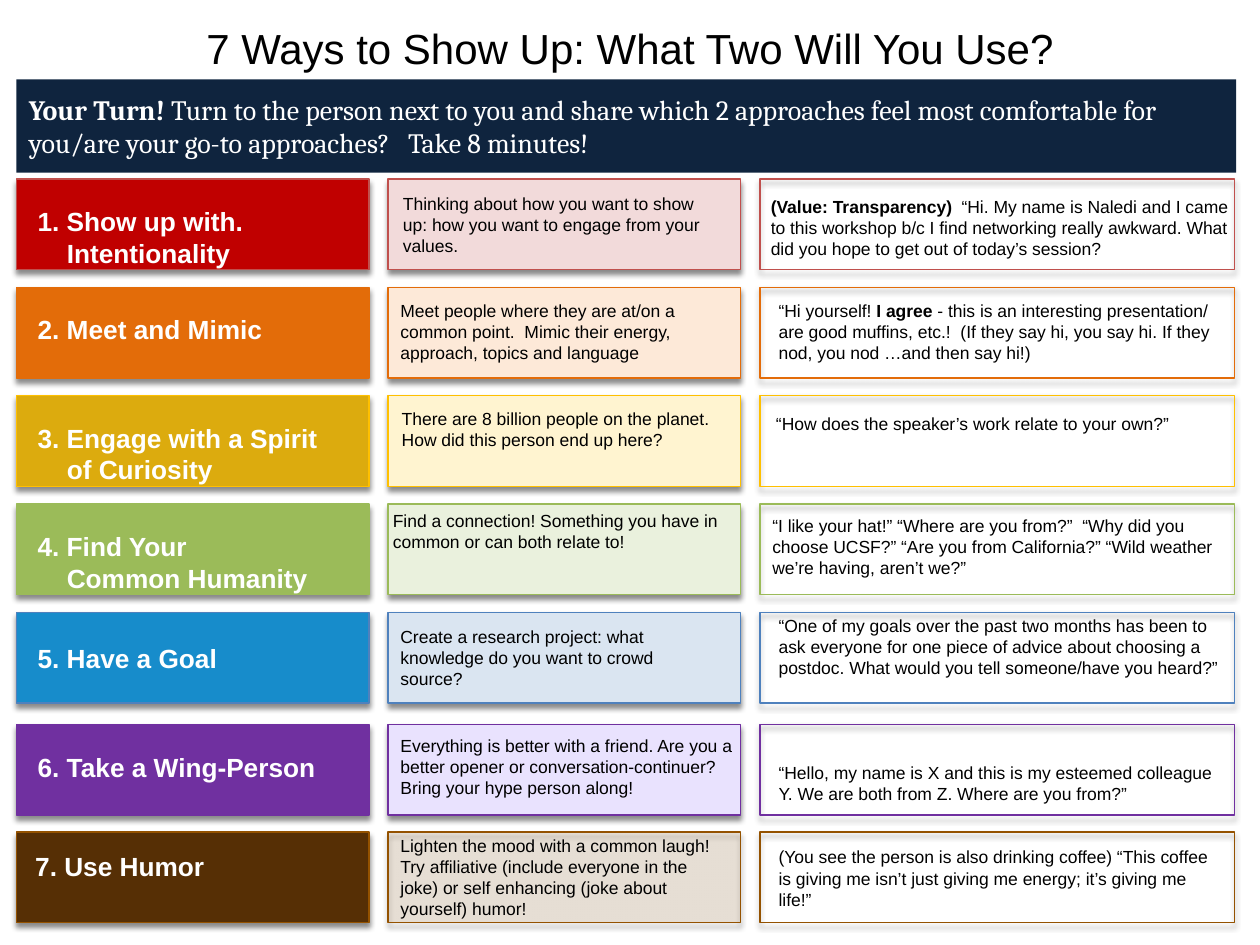
from pptx import Presentation
from pptx.dml.color import RGBColor
from pptx.enum.shapes import MSO_SHAPE
from pptx.enum.text import MSO_ANCHOR, PP_ALIGN
from pptx.oxml.ns import qn
from pptx.util import Pt
from lxml import etree

RECTANGLE = MSO_SHAPE.RECTANGLE
TOP, MIDDLE = MSO_ANCHOR.TOP, MSO_ANCHOR.MIDDLE
LEFT, CENTER = PP_ALIGN.LEFT, PP_ALIGN.CENTER

COLORS = {
    "black": "000000", "white": "FFFFFF", "navy": "0F243E",
    "red": "C00000", "rose": "F2DADA", "brick": "C0504D",
    "orange": "E36C09", "peach": "FDE9D8",
    "mustard": "DCAB0E", "cream": "FFF4D0", "gold": "FFC000",
    "green": "9BBB59", "mint": "EAF1DD",
    "blue": "178CCB", "ice": "DAE5F1", "steel": "4F81BD",
    "purple": "7030A0", "lilac": "E9E2FE",
    "umber": "562F05", "brown": "945200",
}

# Left edge and width of the label, advice and example columns
COLUMNS = [(9.36, 201.6), (221.76, 201.6), (434.2, 271.4)]
ROW_HEIGHT = 51.84
LABEL_INDENT = 16.68

# Row top, label fill, advice fill, advice opacity, outline, then for each
# column its text and the text's left, top, width and height.
# ** switches bold on and off.
WAYS = [
    (102.24, "red", "rose", 100, "brick",
     ("1. Show up with.\nIntentionality", 14.4, 113.8, 186.5, 43.9),
     ("Thinking about how you want to show up: how you want to engage from "
      "your values.", 223.2, 106.6, 191.5, 43.9),
     ("**(Value: Transparency) ** “Hi. My name is Naledi and I came to this "
      "workshop b/c I find networking really awkward. What did you hope to "
      "get out of today’s session?", 433.4, 108.7, 280.8, 55.4)),
    (164.16, "orange", "peach", 100, "orange",
     ("2. Meet and Mimic", 14.4, 175.7, 186.5, 37.4),
     ("Meet people where they are at/on a common point.  Mimic their energy, "
      "approach, topics and language", 221.76, 167.8, 191.5, 43.9),
     ("“Hi yourself! **I agree **- this is an interesting presentation/ are "
      "good muffins, etc.!  (If they say hi, you say hi. If they nod, you "
      "nod …and then say hi!)", 437.8, 167.8, 265.7, 67.7)),
    (226.08, "mustard", "cream", 100, "gold",
     ("3. Engage with a Spirit\nof Curiosity", 14.4, 237.6, 186.5, 55.4),
     ("There are 8 billion people on the planet. How did this person end up "
      "here?", 222.5, 229.7, 191.5, 31.7),
     ("“How does the speaker’s work relate to your own?”",
      436.3, 232.6, 265.7, 43.9)),
    (288, "green", "mint", 100, "green",
     ("4. Find Your\nCommon Humanity", 14.4, 299.5, 186.5, 43.9),
     ("Find a connection! Something you have in common or can both relate "
      "to!", 217.4, 288, 210.2, 31.7),
     ("“I like your hat!” “Where are you from?”  “Why did you choose UCSF?” "
      "“Are you from California?” “Wild weather we’re having, aren’t we?”",
      434.2, 290.9, 265.7, 67.7)),
    (349.92, "blue", "ice", 100, "steel",
     ("5. Have a Goal", 14.4, 363.6, 186.5, 25.2),
     ("Create a research project: what knowledge do you want to crowd "
      "source?", 221.76, 354.2, 191.5, 43.9),
     ("“One of my goals over the past two months has been to ask everyone "
      "for one piece of advice about choosing a postdoc. What would you tell "
      "someone/have you heard?”", 437.8, 347.8, 265.7, 79.9)),
    (414, "purple", "lilac", 100, "purple",
     ("6. Take a Wing-Person", 14.4, 425.5, 186.5, 25.2),
     ("Everything is better with a friend. Are you a better opener or "
      "conversation-continuer?  Bring your hype person along!",
      221.76, 416.2, 212.4, 43.9),
     ("“Hello, my name is X and this is my esteemed colleague Y. We are both "
      "from Z. Where are you from?”", 437.8, 432, 265.7, 55.4)),
    (475.4, "umber", "brown", 12, "brown",
     ("7. Use Humor", 13, 482.4, 186.5, 25.2),
     ("Lighten the mood with a common laugh! Try affiliative (include "
      "everyone in the joke) or self enhancing (joke about yourself) humor!",
      221.76, 473.8, 191.5, 55.4),
     ("(You see the person is also drinking coffee) “This coffee is giving "
      "me isn’t just giving me energy; it’s giving me life!”",
      437.8, 480.2, 265.7, 67.7)),
]


class SlideBuilder:
    font = "Arial"
    line_width = 0.79

    def __init__(self, slide):
        self.slide = slide

    def color(self, name):
        return RGBColor.from_string(COLORS[name])

    def box(self, left, top, width, height, fill=None, line=None, opacity=100):
        """A rectangle; an outlined one also casts a soft shadow."""
        box = self.slide.shapes.add_shape(
            RECTANGLE, Pt(left), Pt(top), Pt(width), Pt(height))
        box.shadow.inherit = False
        if fill:
            box.fill.solid()
            box.fill.fore_color.rgb = self.color(fill)
        else:
            box.fill.background()
        if opacity < 100:
            tint = box._element.spPr.find(qn("a:solidFill"))[0]
            etree.SubElement(tint, qn("a:alpha"), val=str(opacity * 1000))
        if line:
            box.line.color.rgb = self.color(line)
            box.line.width = Pt(self.line_width)
            self.cast_shadow(box)
        else:
            box.line.fill.background()
        return box

    def cast_shadow(self, box):
        effects = box._element.spPr.find(qn("a:effectLst"))
        shadow = etree.SubElement(
            effects, qn("a:outerShdw"), blurRad=str(int(Pt(3))),
            dist=str(int(Pt(2.4))), dir="5400000", rotWithShape="0")
        shade = etree.SubElement(shadow, qn("a:srgbClr"), val=COLORS["black"])
        etree.SubElement(shade, qn("a:alpha"), val="45000")

    def set_text(self, frame, text, size, color="black", font=None, bold=False,
                 align=LEFT, anchor=TOP, hanging=0):
        """Fill a text frame; later lines align with the hanging indent."""
        frame.word_wrap = True
        frame.vertical_anchor = anchor
        frame.text = text.replace("**", "")
        for number, line in enumerate(text.split("\n")):
            paragraph = frame.paragraphs[number]
            paragraph.alignment = align
            if hanging:
                properties = paragraph._p.get_or_add_pPr()
                properties.set("marL", str(int(Pt(hanging))))
                properties.set("indent", str(0 if number else -int(Pt(hanging))))
            paragraph.clear()
            for index, part in enumerate(line.split("**")):
                if not part:
                    continue
                run = paragraph.add_run()
                run.text = part
                run.font.name = font or self.font
                run.font.size = Pt(size)
                run.font.bold = bold or index % 2 == 1
                run.font.color.rgb = self.color(color)

    def text(self, content, left, top, width, height, size, **style):
        box = self.slide.shapes.add_textbox(
            Pt(left), Pt(top), Pt(width), Pt(height))
        self.set_text(box.text_frame, content, size, **style)


def main():
    deck = Presentation()
    deck.slide_width, deck.slide_height = Pt(720), Pt(540)
    builder = SlideBuilder(deck.slides.add_slide(deck.slide_layouts[6]))

    # Seven ways: label, advice and example
    for top, fill, tint, opacity, outline, label, advice, example in WAYS:
        looks = [(fill, 100), (tint, opacity), (None, 100)]
        for (left, width), (shade, alpha) in zip(COLUMNS, looks):
            builder.box(left, top, width, ROW_HEIGHT, shade, outline, alpha)
        builder.text(*label, size=15, color="white", bold=True,
                     hanging=LABEL_INDENT)
        builder.text(*advice, size=10)
        builder.text(*example, size=10)

    # Title
    builder.text("7 Ways to Show Up: What Two Will You Use?",
                 0, 9.36, 720, 77.76, size=24, align=CENTER)

    # Call to action
    banner = builder.box(9.36, 45.36, 697, 53.28, "navy")
    banner.text_frame.margin_top = banner.text_frame.margin_bottom = Pt(7.2)
    builder.set_text(
        banner.text_frame,
        "**Your Turn!** Turn to the person next to you and share which 2 "
        "approaches feel most comfortable for you/are your go-to approaches?"
        "   Take 8 minutes!",
        16, color="white", font="Cambria", anchor=MIDDLE)

    deck.save("out.pptx")


if __name__ == "__main__":
    main()
